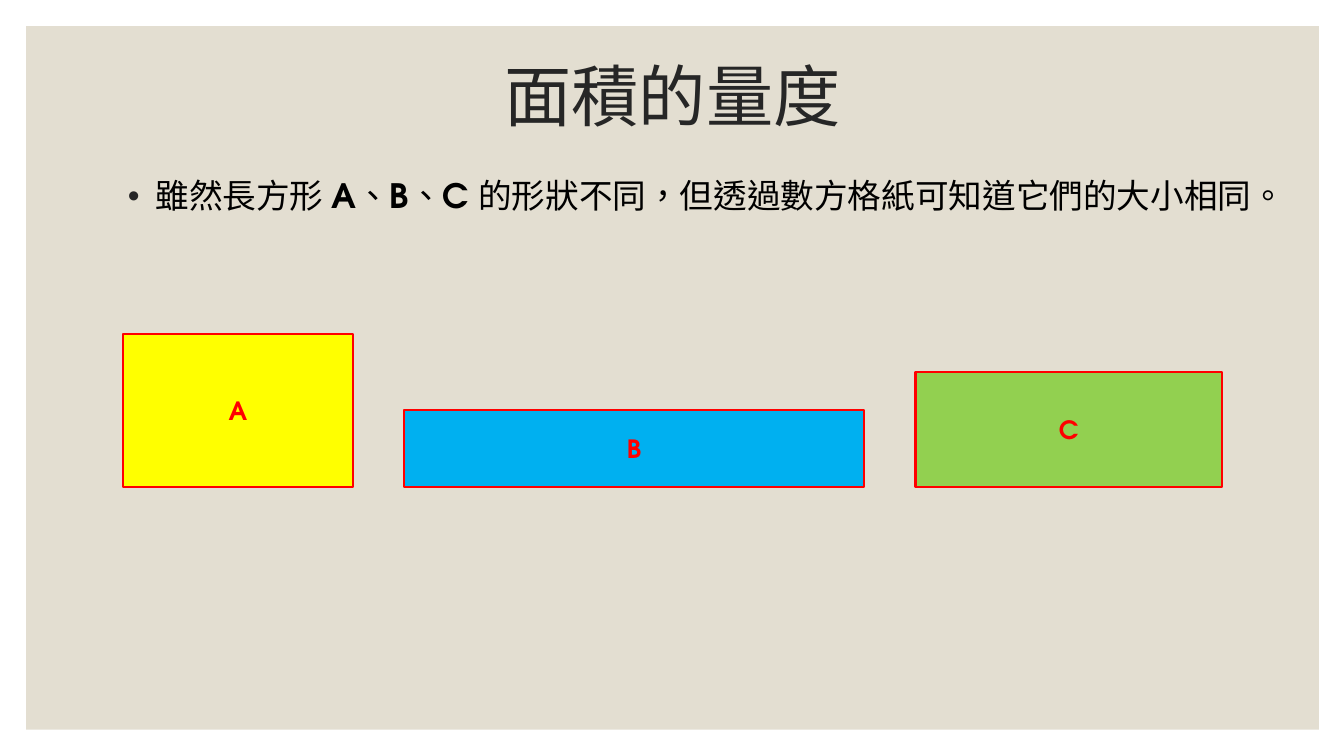
"""Build a slide comparing three rectangles of equal area."""
from lxml.etree import SubElement
from pptx import Presentation
from pptx.dml.color import RGBColor
from pptx.enum.lang import MSO_LANGUAGE_ID
from pptx.enum.shapes import MSO_SHAPE
from pptx.enum.text import MSO_ANCHOR, PP_ALIGN
from pptx.oxml.ns import qn
from pptx.util import Inches, Pt

TITLE = "面積的量度"
BODY = [
    (" 雖然長方形 ", False), ("A", True), ("、", False), ("B", True),
    ("、", False), ("C", True),
    (" 的形狀不同，但透過數方格紙可知道它們的大小相同。", False),
]
RECTANGLES = [("A", 3, 2, "yellow"), ("B", 6, 1, "blue"), ("C", 4, 1.5, "green")]
COLORS = {
    "panel": "E3DED1", "title": "262626", "black": "000000", "red": "FF0000",
    "yellow": "FFFF00", "blue": "00B0F0", "green": "92D050",
}
FONT = "TeX Gyre Adventor"
UNIT, GAP, LEFT, BASE = 0.76, 0.51, 1.22, 4.83


def rgb(name):
    return RGBColor.from_string(COLORS[name])


def add_text(p, text, size=24, color="black", bold=False):
    r = p.add_run()
    r.text = text
    r.font.name = FONT
    r.font.size = Pt(size)
    r.font.bold = bold
    r.font.color.rgb = rgb(color)
    r.font.language_id = MSO_LANGUAGE_ID.TRADITIONAL_CHINESE


def add_rect(s, x, y, w, h, fill):
    sp = s.shapes.add_shape(MSO_SHAPE.RECTANGLE, *map(Inches, (x, y, w, h)))
    sp.shadow.inherit = False
    sp.fill.solid()
    sp.fill.fore_color.rgb = rgb(fill)
    sp.line.fill.background()
    return sp


def add_bullet(p):
    pPr = p._p.get_or_add_pPr()
    pPr.set("marL", str(Inches(0.2)))
    pPr.set("indent", str(-Inches(0.2)))
    color = SubElement(pPr, qn("a:buClr"))
    SubElement(color, qn("a:srgbClr"), val=COLORS["title"])
    SubElement(pPr, qn("a:buFont"), typeface="Arial")
    SubElement(pPr, qn("a:buChar"), char="•")


def main():
    prs = Presentation()
    prs.slide_width, prs.slide_height = Inches(13.33), Inches(7.5)
    s = prs.slides.add_slide(prs.slide_layouts[5])

    panel = add_rect(s, 0.26, 0.26, 12.82, 6.98, "panel")
    title = s.shapes.title
    panel._element.addnext(title._element)
    title.left, title.top = Inches(1.42), Inches(0.27)
    title.width, title.height = Inches(10.5), Inches(1.43)
    title.text_frame.vertical_anchor = MSO_ANCHOR.MIDDLE
    p = title.text_frame.paragraphs[0]
    p.alignment = PP_ALIGN.CENTER
    p.line_spacing = 0.9
    add_text(p, TITLE, size=48, color="title")

    body = s.shapes.add_textbox(*map(Inches, (1.17, 1.69, 11.64, 0.57)))
    body.text_frame.word_wrap = True
    p = body.text_frame.paragraphs[0]
    p.space_before = Pt(9)
    add_bullet(p)
    for text, bold in BODY:
        add_text(p, text, bold=bold)

    x = LEFT
    for label, cols, rows, fill in RECTANGLES:
        w, h = cols * UNIT, rows * UNIT
        sp = add_rect(s, x, BASE - h, w, h, fill)
        sp.line.color.rgb = rgb("red")
        sp.line.width = Pt(1.5)
        p = sp.text_frame.paragraphs[0]
        p.alignment = PP_ALIGN.CENTER
        add_text(p, label, size=18, color="red", bold=True)
        x += w + GAP

    prs.save("out.pptx")


if __name__ == "__main__":
    main()
